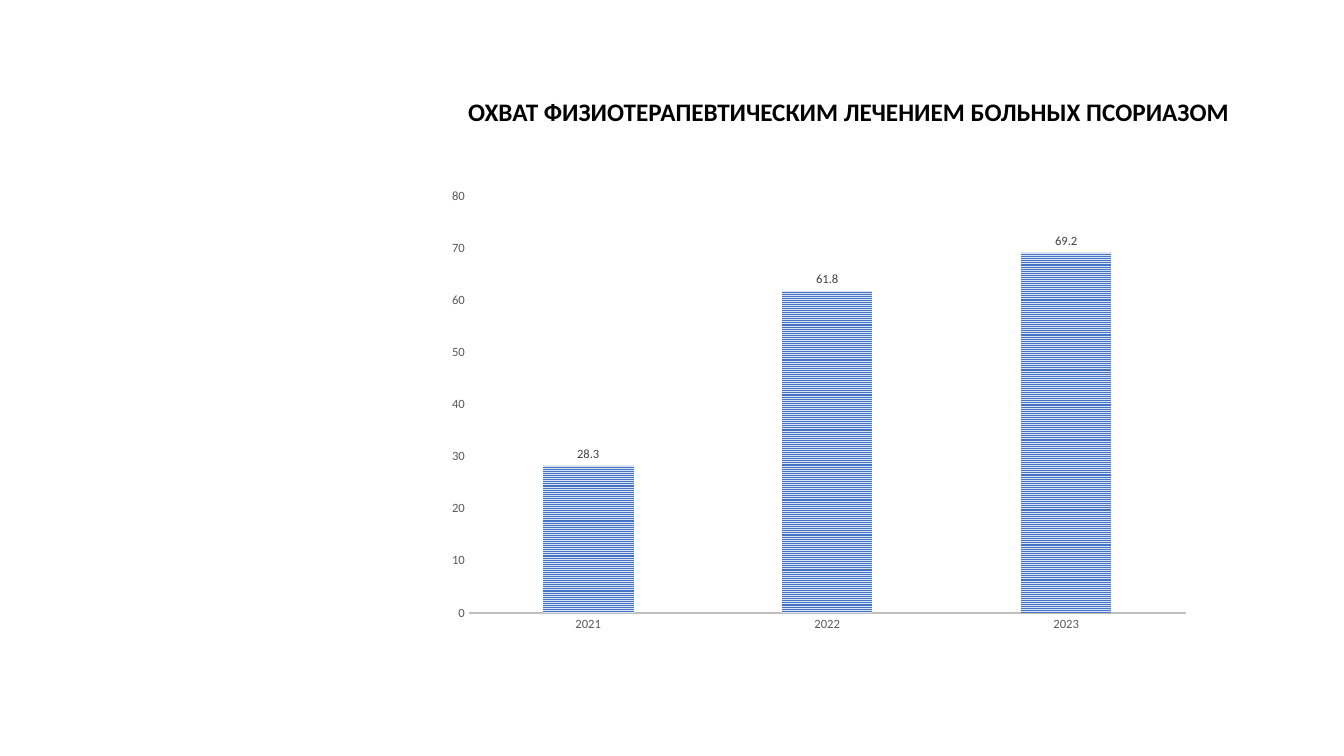
from dataclasses import dataclass

import pptx
import pptx.chart.data
import pptx.dml.color
import pptx.enum.chart
import pptx.enum.dml
import pptx.enum.text
import pptx.oxml
import pptx.oxml.ns
import pptx.util
from pptx.util import Cm, Pt


@dataclass(frozen=True)
class Theme:
    font: str = "Calibri"
    heading: str = "000000"
    axis_text: str = "595959"
    axis_line: str = "BFBFBF"
    label_text: str = "404040"
    stripe: str = "4472C4"
    stripe_back: str = "DAE3F3"
    heading_size: int = 18
    chart_size: int = 10
    small_size: int = 9


THEME = Theme()
LEFT = Cm(11.23)
COVERAGE = {"2021": 28.3, "2022": 61.8, "2023": 69.2}


def rgb(value):
    return pptx.dml.color.RGBColor.from_string(value)


def set_font(font, size, color, bold=False):
    font.name = THEME.font
    font.size = Pt(size)
    font.bold = bold
    font.color.rgb = rgb(color)


def add_heading(slide, text):
    heading = slide.shapes.add_textbox(LEFT, Cm(1.02), Cm(20.32), Cm(3.68))
    frame = heading.text_frame
    frame.word_wrap = True
    frame.vertical_anchor = pptx.enum.text.MSO_ANCHOR.MIDDLE
    paragraph = frame.paragraphs[0]
    paragraph.text = text
    paragraph.alignment = pptx.enum.text.PP_ALIGN.CENTER
    paragraph.line_spacing = 0.9
    set_font(paragraph.font, THEME.heading_size, THEME.heading, bold=True)


def place_plot(chart, x, y, w, h):
    """Fix the inner plot area, in fractions of the chart's size."""
    plot_area = chart.element.find(".//" + pptx.oxml.ns.qn("c:plotArea"))
    for layout in plot_area.findall(pptx.oxml.ns.qn("c:layout")):
        plot_area.remove(layout)
    settings = {"layoutTarget": "inner", "xMode": "edge", "yMode": "edge",
                "x": x, "y": y, "w": w, "h": h}
    parts = "".join(f'<c:{tag} val="{val}"/>' for tag, val in settings.items())
    plot_area.insert(0, pptx.oxml.parse_xml(
        f'<c:layout {pptx.oxml.ns.nsdecls("c")}>'
        f"<c:manualLayout>{parts}</c:manualLayout></c:layout>"))


def style_axis(axis):
    axis.has_major_gridlines = False
    axis.major_tick_mark = pptx.enum.chart.XL_TICK_MARK.NONE
    axis.minor_tick_mark = pptx.enum.chart.XL_TICK_MARK.NONE
    set_font(axis.tick_labels.font, THEME.small_size, THEME.axis_text)


def style_columns(plot):
    plot.gap_width = 164
    plot.overlap = -22
    plot.vary_by_categories = False
    fill = plot.series[0].format.fill
    fill.patterned()
    fill.pattern = pptx.enum.dml.MSO_PATTERN.NARROW_HORIZONTAL
    fill.fore_color.rgb = rgb(THEME.stripe)
    fill.back_color.rgb = rgb(THEME.stripe_back)
    plot.has_data_labels = True
    labels = plot.data_labels
    labels.show_value = True
    labels.position = pptx.enum.chart.XL_LABEL_POSITION.OUTSIDE_END
    set_font(labels.font, THEME.small_size, THEME.label_text)


def add_coverage_chart(slide):
    data = pptx.chart.data.CategoryChartData()
    data.categories = list(COVERAGE)
    data.add_series("Series 1", list(COVERAGE.values()))
    chart = slide.shapes.add_chart(
        pptx.enum.chart.XL_CHART_TYPE.COLUMN_CLUSTERED,
        LEFT, Cm(4.7), Cm(19.43), Cm(11.81), data).chart
    chart.has_title = False
    chart.has_legend = False
    set_font(chart.font, THEME.chart_size, THEME.heading)
    place_plot(chart, 0.03, 0.02, 0.93, 0.89)
    style_axis(chart.category_axis)
    style_axis(chart.value_axis)
    axis_line = chart.category_axis.format.line
    axis_line.color.rgb = rgb(THEME.axis_line)
    axis_line.width = Pt(1.5)
    chart.value_axis.minimum_scale = 0
    chart.value_axis.maximum_scale = 80
    chart.value_axis.major_unit = 10
    chart.value_axis.format.line.fill.background()
    style_columns(chart.plots[0])


def main():
    presentation = pptx.Presentation()
    presentation.slide_width = Cm(33.87)
    presentation.slide_height = Cm(19.05)
    slide = presentation.slides.add_slide(presentation.slide_layouts[6])
    add_heading(slide, "ОХВАТ ФИЗИОТЕРАПЕВТИЧЕСКИМ ЛЕЧЕНИЕМ БОЛЬНЫХ ПСОРИАЗОМ")
    add_coverage_chart(slide)
    presentation.save("out.pptx")


if __name__ == "__main__":
    main()
